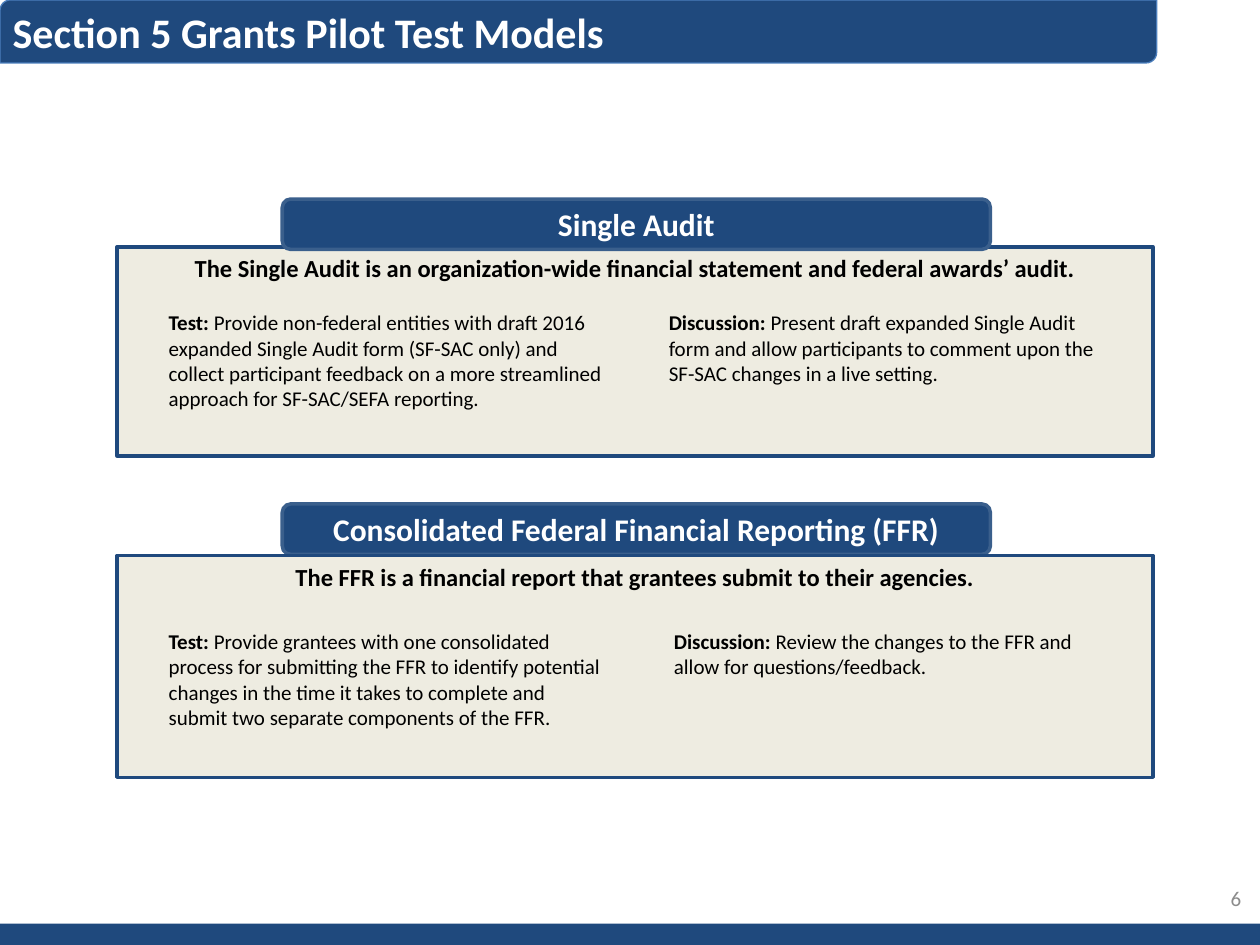
from dataclasses import dataclass

from pptx import Presentation
from pptx import util as u
from pptx.dml.color import RGBColor
from pptx.enum import shapes, text

KIND = shapes.MSO_SHAPE
ALIGN = text.PP_ALIGN
ANCHOR = text.MSO_ANCHOR


@dataclass(frozen=True)
class Theme:
    font: str = "Calibri"
    navy: str = "1F497D"
    edge: str = "3A5F8C"
    trim: str = "4B7EBC"
    cream: str = "EEECE1"
    white: str = "FFFFFF"
    black: str = "000000"
    gray: str = "8C8C8C"
    title: int = 24
    head: int = 18
    lead: int = 14
    body: int = 12


def write(frame, words, size, color, font, lead="", bold=False,
          align=ALIGN.LEFT, anchor=ANCHOR.TOP):
    """Fill a frame with one paragraph; lead is a bold opening."""
    frame.word_wrap = True
    frame.auto_size = text.MSO_AUTO_SIZE.NONE
    frame.vertical_anchor = anchor
    para = frame.paragraphs[0]
    para.alignment = align
    for part, heavy in ((lead, True), (words, bold)):
        if part:
            run = para.add_run()
            run.text = part
            run.font.name = font
            run.font.size = u.Pt(size)
            run.font.bold = heavy
            run.font.color.rgb = RGBColor.from_string(color)


class Page:
    def __init__(self, deck, theme):
        self.theme = theme
        self.slide = deck.slides.add_slide(deck.slide_layouts[5])

    def shape(self, kind, box, fill, line=None, width=2):
        item = self.slide.shapes.add_shape(kind, *map(u.Inches, box))
        item.shadow.inherit = False
        item.fill.solid()
        item.fill.fore_color.rgb = RGBColor.from_string(fill)
        if line:
            item.line.color.rgb = RGBColor.from_string(line)
            item.line.width = u.Pt(width)
        else:
            item.line.fill.background()
        return item

    def label(self, box, words, color=None, **form):
        item = self.slide.shapes.add_textbox(*map(u.Inches, box))
        t = self.theme
        write(item.text_frame, words, t.body, color or t.black, t.font, **form)

    def title(self, box, words):
        item, t = self.slide.shapes.title, self.theme
        item.left, item.top, item.width, item.height = map(u.Inches, box)
        write(item.text_frame, words, t.title, t.white, t.font, bold=True)
        # Bring the title in front of its banner
        item.element.getparent().append(item.element)

    def panel(self, top, tall, head, lead, cols):
        """Framed panel with two text columns and a header tab."""
        t = self.theme
        card = self.shape(KIND.RECTANGLE, (0.93, top, 8.22, tall),
                          t.cream, t.navy)
        write(card.text_frame, lead, t.lead, t.black, t.font,
              bold=True, align=ALIGN.CENTER)
        for name, (box, words) in zip(("Test: ", "Discussion: "), cols):
            self.label(box, words, lead=name)
        return head

    def tab(self, top, words):
        t = self.theme
        item = self.shape(KIND.ROUNDED_RECTANGLE, (2.24, top, 5.62, 0.4),
                          t.navy, t.edge)
        write(item.text_frame, words, t.head, t.white, t.font, bold=True,
              align=ALIGN.CENTER, anchor=ANCHOR.MIDDLE)


def main():
    deck = Presentation()
    deck.slide_width, deck.slide_height = u.Inches(10), u.Inches(7.5)
    theme = Theme()
    page = Page(deck, theme)

    # Footer bar and title banner
    page.shape(KIND.RECTANGLE, (0, 7.33, 10, 0.17), theme.navy)
    page.shape(KIND.ROUND_2_DIAG_RECTANGLE, (0, 0, 9.18, 0.5),
               theme.navy, theme.trim, 0.75)
    page.title((0, 0, 8.5, 0.5), "Section 5 Grants Pilot Test Models")

    # Single Audit
    page.panel(
        1.96, 1.66, "Single Audit",
        "The Single Audit is an organization-wide financial statement "
        "and federal awards’ audit.",
        [((1.24, 2.41, 3.68, 0.91),
          "Provide non-federal entities with draft 2016 expanded Single "
          "Audit form (SF-SAC only) and collect participant feedback on a "
          "more streamlined approach for SF-SAC/SEFA reporting."),
         ((5.21, 2.41, 3.66, 0.71),
          "Present draft expanded Single Audit form and allow participants "
          "to comment upon the SF-SAC changes in a live setting.")])
    page.tab(1.58, "Single Audit")

    # Federal Financial Reporting
    page.tab(4, "Consolidated Federal Financial Reporting (FFR)")
    page.panel(
        4.41, 1.76, "Consolidated Federal Financial Reporting (FFR)",
        "The FFR is a financial report that grantees submit to their agencies.",
        [((1.24, 4.94, 3.68, 0.91),
          "Provide grantees with one consolidated process for submitting "
          "the FFR to identify potential changes in the time it takes to "
          "complete and submit two separate components of the FFR."),
         ((5.25, 4.94, 3.62, 0.5),
          "Review the changes to the FFR and allow for questions/feedback.")])

    # Page number
    page.label((7.62, 6.93, 2.33, 0.4), "6", theme.gray,
               align=ALIGN.RIGHT, anchor=ANCHOR.MIDDLE)
    deck.save("out.pptx")


if __name__ == "__main__":
    main()
